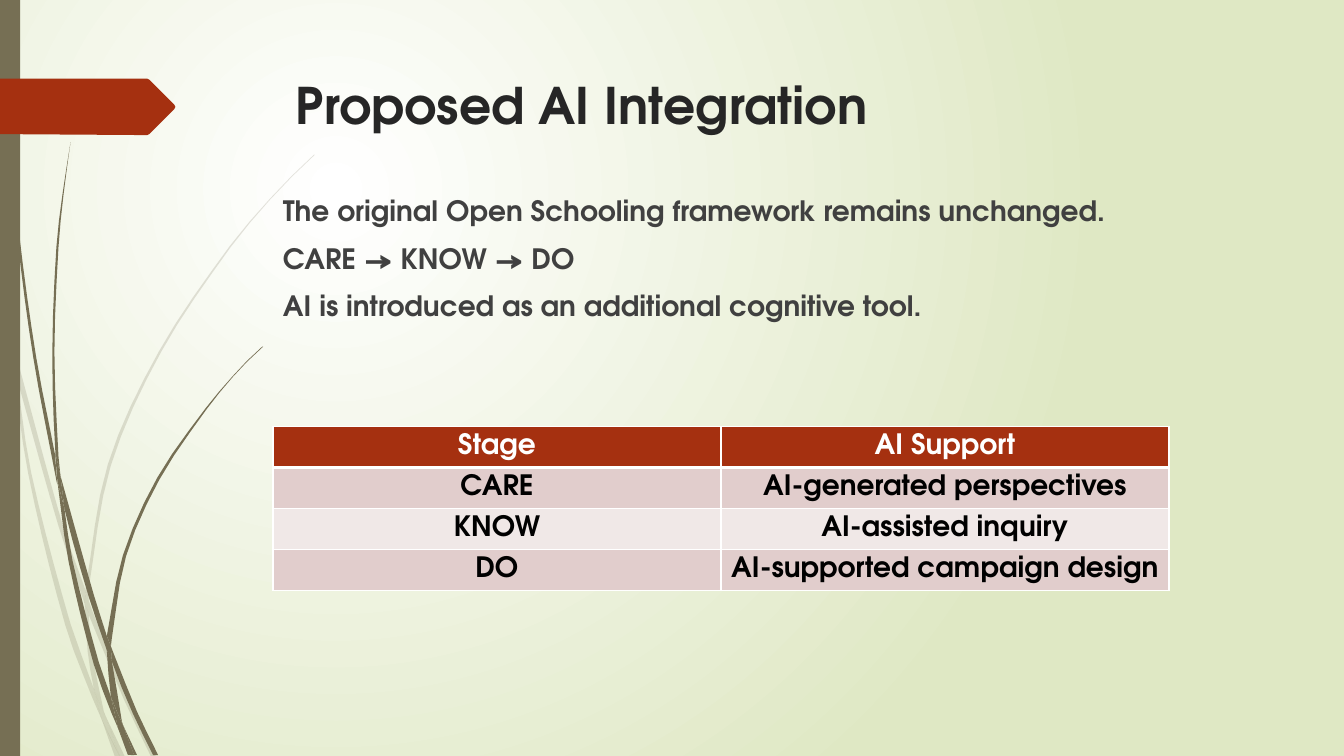
from itertools import accumulate

from lxml import etree
from pptx import Presentation
from pptx.dml.color import RGBColor
from pptx.enum.shapes import MSO_SHAPE
from pptx.enum.text import MSO_ANCHOR, PP_ALIGN
from pptx.oxml import parse_xml
from pptx.oxml.ns import nsdecls, qn
from pptx.util import Pt

RECT = MSO_SHAPE.RECTANGLE
TOP, MIDDLE = MSO_ANCHOR.TOP, MSO_ANCHOR.MIDDLE
LEFT, CENTER = PP_ALIGN.LEFT, PP_ALIGN.CENTER

PALE_REEDS = [
    ([(7.9, 252), (6.5, 231.8), (0, 203)], [(0, 215.3), (7.2, 247.7), (7.9, 252)]),
    ([(12.2, 270.7), (41.8, 375.8), (60.5, 431.3)],
     [(61.2, 421.9), (44.6, 374.4), (10.1, 248.4)]),
    ([(63.4, 439.2), (88.6, 499.7), (108, 540.7)],
     [(111.6, 540.7), (91.4, 498.2), (66.2, 437), (63.4, 429.1)]),
    ([(85.7, 540.7)], [(89.3, 540.7), (75.6, 511.9)]),
    ([(7.9, 252), (20.2, 338.4), (46.8, 447.1), (66.2, 499), (72.7, 514.1)],
     [(71.3, 509), (67, 491.8), (50.4, 445.7), (22.3, 337.7), (12.2, 270.7)]),
    ([(60.5, 431.3), (62.6, 465.1), (67, 491.8), (69.1, 498.2), (75.6, 511.9)],
     [(74.2, 508.3), (65.5, 465.1), (63.4, 439.2), (63.4, 437.8)]),
    ([(63.4, 429.1), (63.4, 420.5), (79.2, 332.6), (115.2, 251.3), (164.9, 176.4),
      (193, 142.6), (208.8, 126), (224.6, 110.9)],
     [(224.6, 110.2), (208.1, 126), (193, 141.8), (164.2, 175.7), (113.8, 250.6),
      (77, 331.9), (61.2, 420.5), (61.2, 421.9)]),
    ([(72.7, 514.1), (82.1, 540.7)], [(85.7, 540.7)]),
    ([(60.5, 431.3), (63.4, 437.8)], [(63.4, 429.1), (61.2, 421.9)]),
    ([(67, 491.8), (71.3, 509), (72.7, 514.1), (85.7, 540.7)],
     [(75.6, 511.9), (69.1, 498.2)]),
]
DARK_REEDS = [
    ([(2.2, 0), (2.9, 34.6), (5, 79.2), (12.2, 167.8), (23.8, 255.6), (40.3, 343.4),
      (41, 346.3)],
     [(39.6, 329), (39.6, 326.2), (25.9, 255.6), (13.7, 167), (5.8, 78.5), (3.6, 34.6),
      (2.9, 0)]),
    ([(43.2, 339.8), (46.1, 363.6), (63.4, 426.2), (76.3, 464.4)],
     [(76.3, 455.8), (76.3, 454.3), (67, 424.8), (43.2, 339.8)]),
    ([(79.2, 461.5), (79.9, 472.3), (95, 509.8), (109.4, 539.3)],
     [(113, 539.3), (97.9, 508.3), (81.4, 467.3)]),
    ([(41, 343.4), (49, 401), (67, 474.5), (79.9, 509.8), (84.2, 519.8)],
     [(83.5, 516.2), (79.2, 497.5), (70.6, 473), (51.8, 400.3), (46.1, 363.6)]),
    ([(43.2, 339.8), (41.8, 326.2), (38.9, 251.3), (41.8, 176.4), (45.4, 139),
      (50.4, 101.5)],
     [(50.4, 101.5), (44.6, 139), (40.3, 176.4), (37.4, 251.3), (39.6, 323.3),
      (43.2, 339.8)]),
    ([(95.8, 539.3)], [(97.9, 539.3), (87.8, 517.7)]),
    ([(39.6, 323.3), (39.6, 326.2), (41, 343.4), (46.1, 363.6)], [(43.2, 339.8)]),
    ([(79.2, 461.5), (79.9, 455.8), (90, 397.4), (113.8, 342.7), (147.6, 292.3),
      (166.3, 269.3), (176.4, 258.5), (187.9, 247.7)],
     [(187.2, 247.7), (176.4, 257.8), (166.3, 268.6), (146.9, 291.6), (112.3, 341.3),
      (87.8, 396.7), (76.3, 454.3)]),
    ([(84.2, 519.8), (91.4, 539.3)], [(94.3, 539.3)]),
    ([(76.3, 464.4), (79.2, 497.5), (83.5, 508.3), (87.8, 517.7)],
     [(87.1, 515.5), (79.9, 472.3), (78.5, 468.7)]),
    ([(76.3, 454.3), (76.3, 464.4), (79.9, 472.3)], [(79.2, 461.5)]),
    ([(79.2, 497.5), (83.5, 516.2), (84.2, 519.8), (93.6, 539.3)],
     [(95.8, 539.3), (87.8, 517.7), (83.5, 508.3)]),
]
BANNER = [(0, 56.2), (105.1, 56.2), (106.6, 56.9), (124.6, 74.9), (125.3, 76.3),
          (124.6, 77.8), (106.6, 95.8), (105.1, 96.5), (0, 95.8)]
ROWS = [("Stage", "AI Support"), ("CARE", "AI-generated perspectives"),
        ("KNOW", "AI-assisted inquiry"), ("DO", "AI-supported campaign design")]


def color(code):
    return RGBColor.from_string(code)


def smooth(edge):
    spots = [complex(*spot) for spot in edge]
    gaps = [abs(b - a) for a, b in zip(spots, spots[1:])]
    marks = list(accumulate(gaps, initial=0))
    last = len(spots) - 1
    curve = [edge[0]]
    slopes = []
    for i in range(last + 1 if last else 0):
        lo, hi = max(i - 1, 0), min(i + 1, last)
        slopes.append((spots[hi] - spots[lo]) / (marks[hi] - marks[lo]))
    for i, gap in enumerate(gaps):
        steps = int(gap // 25) + 1
        for step in range(1, steps + 1):
            t = step / steps
            blend = t * t * (3 - 2 * t)
            spot = (spots[i] * (1 - blend) + spots[i + 1] * blend
                    + gap * t * (1 - t) * ((1 - t) * slopes[i] - t * slopes[i + 1]))
            curve.append((spot.real, spot.imag))
    return curve


class Deck:
    font = "TeX Gyre Adventor"
    olive, rust, white = "766F54", "A53010", "FFFFFF"

    def __init__(self, slide):
        self.slide = slide

    def glow(self, inner, outer):
        fill = self.slide.background.fill
        fill.gradient()
        for stop, code, place in zip(fill.gradient_stops, (inner, outer), (0, 1)):
            stop.color.rgb = color(code)
            stop.position = place
        grad = self.slide.element.find(".//" + qn("a:gradFill"))
        grad.replace(grad.find(qn("a:lin")), parse_xml(
            f'<a:path {nsdecls("a")} path="circle"><a:fillToRect l="50000" t="50000" '
            'r="100000" b="100000"/></a:path>'))

    def paint(self, shape, code, alpha=100):
        shape.shadow.inherit = False
        shape.fill.solid()
        shape.fill.fore_color.rgb = color(code)
        shape.line.fill.background()
        if alpha < 100:
            tint = shape.element.spPr.find(".//" + qn("a:srgbClr"))
            etree.SubElement(tint, qn("a:alpha"), val=str(alpha * 1000))

    def form(self, spots, code, alpha=100):
        first, *rest = [(Pt(x), Pt(y)) for x, y in spots]
        pen = self.slide.shapes.build_freeform(*first)
        pen.add_line_segments(rest)
        self.paint(pen.convert_to_shape(), code, alpha)

    def reeds(self, blades, alpha=100):
        for left, right in blades:
            self.form(smooth(left) + smooth(right), self.olive, alpha)

    def bar(self, x, y, w, h):
        self.paint(self.slide.shapes.add_shape(RECT, Pt(x), Pt(y), Pt(w), Pt(h)), self.olive)

    def style(self, para, size, code, align=LEFT):
        para.alignment = align
        font = para.font
        font.name, font.size, font.bold = self.font, Pt(size), True
        font.color.rgb = color(code)

    def text(self, x, y, w, h, lines, size, code):
        frame = self.slide.shapes.add_textbox(Pt(x), Pt(y), Pt(w), Pt(h)).text_frame
        frame.word_wrap = True
        frame.vertical_anchor = TOP
        frame.text = "\n".join(lines)
        for i, para in enumerate(frame.paragraphs):
            self.style(para, size, code)
            para.space_before = Pt(10 if i else 0)

    def cell(self, cell, words, fill, ink, top, base):
        cell.text = words
        cell.vertical_anchor = MIDDLE
        cell.margin_top = cell.margin_bottom = 0
        cell.margin_left = cell.margin_right = Pt(5.4)
        self.style(cell.text_frame.paragraphs[0], 20, ink, CENTER)
        props = cell._tc.get_or_add_tcPr()
        for side, width in zip("LRTB", (1, 1, top, base)):
            props.append(parse_xml(
                f'<a:ln{side} {nsdecls("a")} w="{Pt(width)}"><a:solidFill>'
                f'<a:srgbClr val="{self.white}"/></a:solidFill></a:ln{side}>'))
        cell.fill.solid()
        cell.fill.fore_color.rgb = color(fill)

    def table(self, x, y, w, high, rows):
        count, wide = len(rows), len(rows[0])
        grid = self.slide.shapes.add_table(
            count, wide, Pt(x), Pt(y), Pt(w), Pt(high * count)).table
        grid.horz_banding = False
        for r, row in enumerate(rows):
            fill = ("F0E8E7", "E1CDCC")[r % 2] if r else self.rust
            ink = "000000" if r else self.white
            top, base = (3 if r == 1 else 1), (1 if r else 3)
            for c, words in enumerate(row):
                self.cell(grid.cell(r, c), words, fill, ink, top, base)


def main():
    prs = Presentation()
    prs.slide_width, prs.slide_height = Pt(960), Pt(540)
    slide = prs.slides.add_slide(prs.slide_layouts[6])
    deck = Deck(slide)
    deck.glow("FFFFFF", "DFE8C4")
    deck.reeds(PALE_REEDS, 20)
    deck.reeds(DARK_REEDS)
    deck.bar(0, 0, 14.4, 540)
    deck.form(BANNER, deck.rust)
    deck.text(204.2, 49.2, 702, 101, ["Proposed AI Integration"], 36, "262626")
    deck.text(195, 134.6, 720, 350, [
        "The original Open Schooling framework remains unchanged.",
        "CARE → KNOW → DO",
        "AI is introduced as an additional cognitive tool."], 20, "404040")
    deck.table(195, 304.8, 640, 29.2, ROWS)
    prs.save("out.pptx")


if __name__ == "__main__":
    main()
